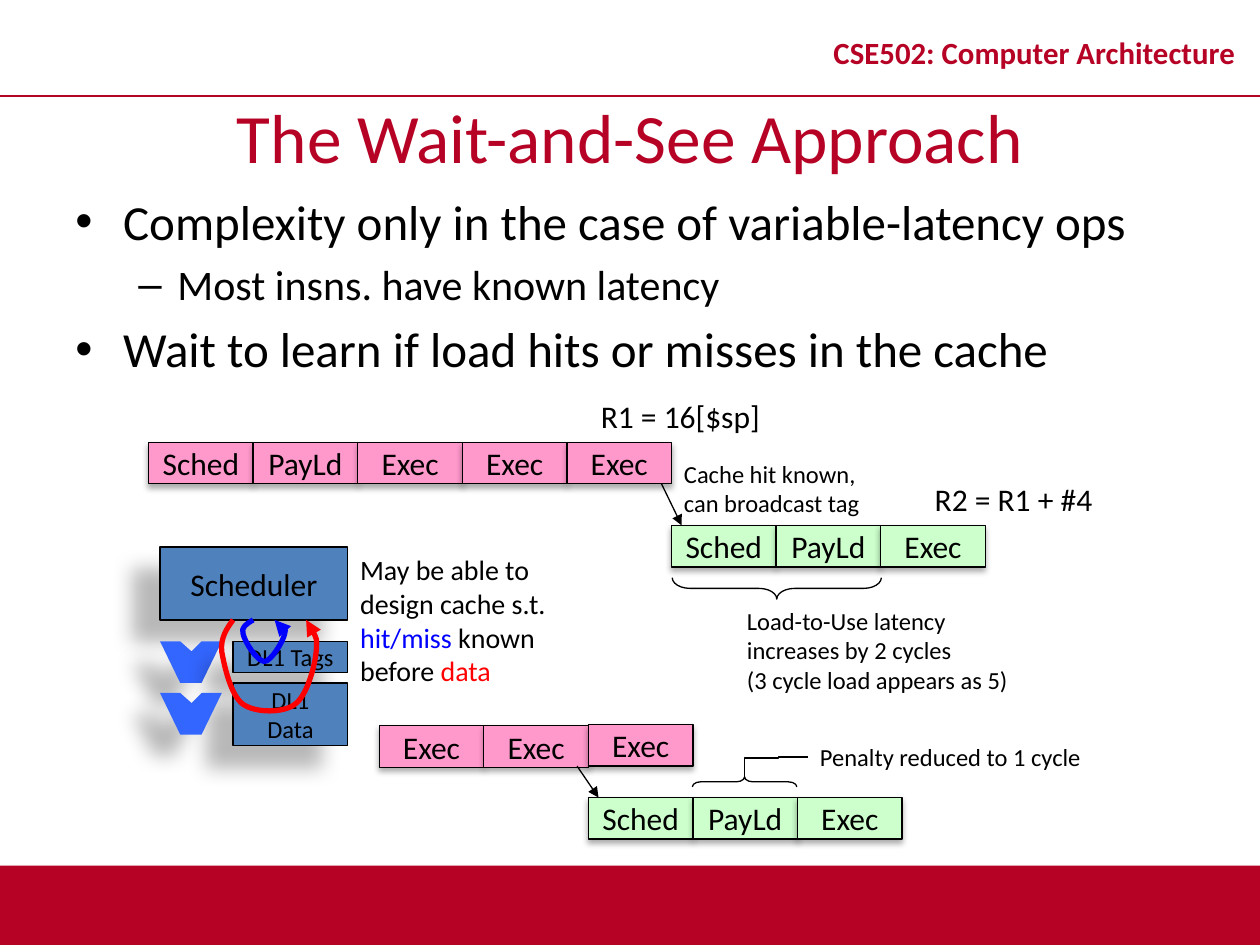
from lxml import etree
from pptx import Presentation, util as u
from pptx.dml.color import RGBColor
from pptx.enum import shapes, text
from pptx.oxml.ns import qn

RED, BLACK, PINK, GREEN = "B60225", "000000", "FF99CC", "CCFFCC"
STEEL, BLUE = "4F81BD", "3366FF"
FLAT = (35, 3.1, 1.8, 90)
SOFT = (32, 3.5, 2.2, 90)
DEEP = (28, 11.8, 19.7, 141)
STEP, HIGH = 0.83, 0.33
MID, LEFT = text.PP_ALIGN.CENTER, text.PP_ALIGN.LEFT


def rgb(code):
    return RGBColor.from_string(code)


class Deck:
    font = "Calibri"

    def __init__(self, show):
        self.slide = show.slides.add_slide(show.slide_layouts[5])
        self.items = self.slide.shapes

    def label(self, frame, words, size, color=BLACK, align=LEFT, bold=False):
        frame.text = words
        for par in frame.paragraphs:
            par.alignment = align
            for run in par.runs:
                self.style(run, size, color, bold)

    def style(self, run, size, color, bold=False):
        run.font.name, run.font.size = self.font, u.Pt(size)
        run.font.bold, run.font.color.rgb = bold, rgb(color)

    def title(self, words, box, size):
        hold = self.items.title
        hold.left, hold.top, hold.width, hold.height = map(u.Inches, box)
        hold.text_frame.vertical_anchor = text.MSO_ANCHOR.MIDDLE
        self.label(hold.text_frame, words, size, RED, MID)

    def note(self, words, box, size, grow=True, **look):
        frame = self.items.add_textbox(*map(u.Inches, box)).text_frame
        frame.word_wrap = not grow
        if grow:
            frame.auto_size = text.MSO_AUTO_SIZE.SHAPE_TO_FIT_TEXT
        self.label(frame, words, size, **look)
        return frame

    def tint(self, par, parts, size):
        """Replace a paragraph's text by runs of (words, colour)."""
        par.text = ""
        for words, color in parts:
            run = par.add_run()
            run.text = words
            self.style(run, size, color)

    def bullets(self, rows, box):
        frame = self.note("\n".join(r[0] for r in rows), box, 28, grow=False)
        for num, (par, row) in enumerate(zip(frame.paragraphs, rows)):
            _, level, size, mark, left, hang = row
            par.level = level
            props = par._p.get_or_add_pPr()
            props.set("marL", str(u.Inches(left)))
            props.set("indent", str(-u.Inches(hang)))
            par.space_before = u.Pt(0.2 * size if num else 0)
            etree.SubElement(props, qn("a:buFont"), typeface="Arial")
            etree.SubElement(props, qn("a:buChar"), char=mark)
            par.runs[0].font.size = u.Pt(size)

    def shade(self, shape, shadow):
        shape.shadow.inherit = False
        if shadow:
            alpha, blur, dist, angle = shadow
            drop = etree.SubElement(
                shape._element.spPr.find(qn("a:effectLst")), qn("a:outerShdw"),
                blurRad=str(u.Pt(blur)), dist=str(u.Pt(dist)),
                dir=str(angle * 60000), algn="ctr", rotWithShape="0")
            tone = etree.SubElement(drop, qn("a:srgbClr"), val=BLACK)
            etree.SubElement(tone, qn("a:alpha"), val=str(alpha * 1000))

    def paint(self, shape, fill, line, width=0.75):
        if fill:
            shape.fill.solid()
            shape.fill.fore_color.rgb = rgb(fill)
        else:
            shape.fill.background()
        if line:
            shape.line.color.rgb, shape.line.width = rgb(line), u.Pt(width)
        else:
            shape.line.fill.background()

    def block(self, words, box, fill, size=18, line=BLACK, shadow=SOFT):
        shape = self.items.add_shape(shapes.MSO_SHAPE.RECTANGLE, *map(u.Inches, box))
        self.paint(shape, fill, line)
        self.shade(shape, shadow)
        if words:
            frame = shape.text_frame
            frame.word_wrap = False
            frame.vertical_anchor = text.MSO_ANCHOR.MIDDLE
            self.label(frame, words, size, align=MID)

    def stages(self, names, left, top, fill):
        for num, name in enumerate(names):
            self.block(name, (left + num * STEP, top, STEP, HIGH), fill)

    def brace(self, box, turn):
        shape = self.items.add_shape(shapes.MSO_SHAPE.RIGHT_BRACE, *map(u.Inches, box))
        shape.adjustments[0], shape.adjustments[1] = 0.83, 0.5
        shape.rotation = turn
        self.paint(shape, None, BLACK)
        self.shade(shape, None)

    def tip(self, shape):
        ends = shape._element.spPr.find(qn("a:ln"))
        etree.SubElement(ends, qn("a:tailEnd"), type="triangle")

    def wire(self, start, end, color=BLACK, width=0.75, tip=False, kind="STRAIGHT"):
        wire = self.items.add_connector(
            shapes.MSO_CONNECTOR[kind], *map(u.Inches, (*start, *end)))
        wire.line.color.rgb, wire.line.width = rgb(color), u.Pt(width)
        if tip:
            self.tip(wire)
        etree.SubElement(wire._element.spPr, qn("a:effectLst"))
        return wire

    def bend(self, start, end, turn, *ratios):
        """Add a four-part elbow; its ends are given before it is turned."""
        props = self.wire(start, end, kind="ELBOW")._element.spPr
        props.find(qn("a:xfrm")).set("rot", str(turn * 60000))
        geom = props.find(qn("a:prstGeom"))
        geom.set("prst", "bentConnector4")
        for num, ratio in enumerate(ratios, 1):
            etree.SubElement(geom.find(qn("a:avLst")), qn("a:gd"),
                             name=f"adj{num}", fmla=f"val {round(ratio * 100000)}")

    def trace(self, points, close):
        spots = [(u.Inches(x), u.Inches(y)) for x, y in points]
        pen = self.items.build_freeform(*spots[0])
        pen.add_line_segments(spots[1:], close=close)
        return pen.convert_to_shape()

    def funnel(self, left, top):
        spots = [(0, 0), (0.16, 0), (0.25, 0.08), (0.33, 0), (0.49, 0),
                 (0.33, 0.33), (0.16, 0.33)]
        shape = self.trace([(left + x, top + y) for x, y in spots], True)
        self.paint(shape, BLUE, None)
        self.shade(shape, DEEP)

    def curve(self, points, color):
        """Draw an arrow through Bezier points: a start, then threes."""
        shape = self.trace(points, False)
        track = shape._element.find(".//" + qn("a:path"))
        legs = track.findall(qn("a:lnTo"))
        for num in range(0, len(legs), 3):
            arc = etree.SubElement(track, qn("a:cubicBezTo"))
            for leg in legs[num:num + 3]:
                arc.append(leg[0])
                track.remove(leg)
        self.paint(shape, None, color, 3)
        self.tip(shape)
        self.shade(shape, None)


def main():
    show = Presentation()
    show.slide_width, show.slide_height = u.Inches(10), u.Inches(7.5)
    deck = Deck(show)

    deck.block("", (0, 6.87, 10, 0.63), RED, line=None, shadow=FLAT)
    deck.wire((0, 0.76), (10, 0.76), RED, 1)
    head = deck.note("CSE502: Computer Architecture", (6.42, 0.13, 3.58, 0.63), 17.6,
                     grow=False, color=RED, align=MID, bold=True)
    head.vertical_anchor = text.MSO_ANCHOR.MIDDLE
    head.paragraphs[0].line_spacing = 0.8
    deck.title("The Wait-and-See Approach", (0, 0.76, 10, 0.63), 39.6)
    deck.bullets([
        ("Complexity only in the case of variable-latency ops", 0, 28, "•", 0.38, 0.38),
        ("Most insns. have known latency", 1, 24, "–", 0.81, 0.31),
        ("Wait to learn if load hits or misses in the cache", 0, 28, "•", 0.38, 0.38),
    ], (0.5, 1.47, 9, 5.35))

    # Load and the operation that waits for it
    use = ["Sched", "PayLd", "Exec"]
    deck.stages(use, 5.33, 4.17, GREEN)
    deck.wire((5.25, 3.84), (5.41, 4.17), tip=True)
    deck.note("R2 = R1 + #4", (7.32, 3.76, 1.61, 0.4), 18)
    deck.stages(use + ["Exec"] * 2, 1.18, 3.51, PINK)
    deck.note("R1 = 16[$sp]", (4.67, 3.1, 1.55, 0.4), 18)
    deck.note("Cache hit known,\ncan broadcast tag", (5.33, 3.59, 1.6, 0.57), 14)
    deck.brace((6.08, 3.84, 0.17, 1.66), 90)
    deck.note("Load-to-Use latency\nincreases by 2 cycles\n(3 cycle load appears as 5)",
              (5.83, 4.76, 2.3, 0.81), 14)

    # Scheduler and cache
    deck.block("Scheduler", (1.27, 4.34, 1.49, 0.58), STEEL, shadow=DEEP)
    deck.funnel(1.27, 5.09)
    deck.block("DL1 Tags", (1.85, 5.09, 0.91, 0.25), STEEL, 14, shadow=DEEP)
    deck.block("DL1\nData", (1.85, 5.42, 0.91, 0.5), STEEL, 14, shadow=DEEP)
    deck.funnel(1.27, 5.5)
    hint = deck.note("May be able to\ndesign cache s.t.\nhit/miss\nbefore",
                     (2.76, 4.34, 1.69, 1.17), 16)
    deck.tint(hint.paragraphs[2], [("hit/miss", "0000FF"), (" known", BLACK)], 16)
    deck.tint(hint.paragraphs[3], [("before ", BLACK), ("data", "FF0000")], 16)
    deck.curve([(2.01, 4.92), (1.96, 4.95), (1.91, 4.98), (1.93, 5.03), (1.94, 5.09),
                (2.04, 5.25), (2.1, 5.25), (2.15, 5.25), (2.25, 5.09), (2.26, 5.03),
                (2.27, 4.98), (2.23, 4.95), (2.18, 4.92)], "0000FF")
    deck.curve([(1.85, 4.92), (1.8, 4.99), (1.75, 5.06), (1.76, 5.17), (1.78, 5.28),
                (1.83, 5.52), (1.93, 5.59), (2.03, 5.66), (2.25, 5.66), (2.34, 5.59),
                (2.44, 5.52), (2.5, 5.28), (2.51, 5.17), (2.52, 5.06), (2.48, 4.99),
                (2.43, 4.92)], "FF0000")

    # Shorter penalty
    deck.stages(["Exec"] * 2, 3.01, 5.76, PINK)
    deck.stages(["Exec"], 4.67, 5.75, PINK)
    deck.stages(use, 4.67, 6.33, GREEN)
    deck.wire((4.58, 6.08), (4.75, 6.33), tip=True)
    deck.brace((5.87, 5.79, 0.08, 0.83), 270)
    deck.note("Penalty reduced to 1 cycle", (6.41, 5.84, 2.3, 0.34), 14)
    deck.bend((6.24, 6.34), (6.08, 5.84), 90, 0.96, 0.54)
    show.save("out.pptx")


if __name__ == "__main__":
    main()
